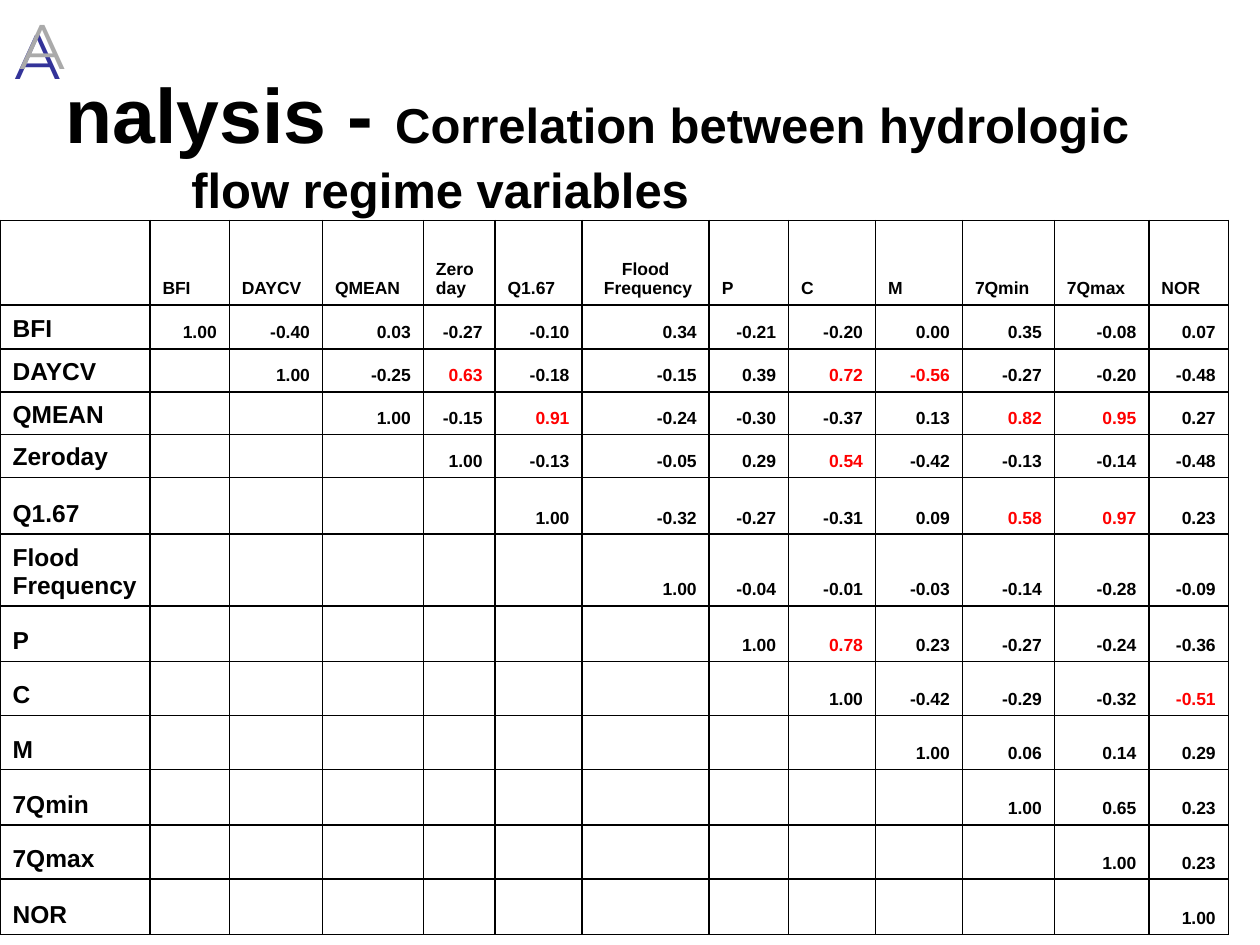
from pptx import Presentation
from pptx.dml.color import RGBColor
from pptx.enum.text import MSO_ANCHOR, PP_ALIGN
from pptx.oxml.ns import qn
from pptx.util import Inches, Pt
from lxml import etree

LEFT, MID, RIGHT = PP_ALIGN.LEFT, PP_ALIGN.CENTER, PP_ALIGN.RIGHT
BOTTOM = MSO_ANCHOR.BOTTOM
COLORS = {"ink": "000000", "red": "FF0000", "blue": "333399",
          "gray": "AAAAAA", "white": "FFFFFF"}

prs = Presentation()
prs.slide_width, prs.slide_height = Inches(10), Inches(7.5)
slide = prs.slides.add_slide(prs.slide_layouts[6])


def add_run(para, text, size, color="ink", face="Arial", bold=True):
    run = para.add_run()
    run.text = text
    run.font.size = Pt(size)
    run.font.name = face
    run.font.bold = bold
    run.font.color.rgb = RGBColor.from_string(COLORS[color])
    return run


def add_edges(cell):
    props = cell._tc.get_or_add_tcPr()
    for n, side in enumerate(("lnL", "lnR", "lnT", "lnB")):
        line = etree.Element(qn("a:" + side), w=str(Pt(1)))
        fill = etree.SubElement(line, qn("a:solidFill"))
        etree.SubElement(fill, qn("a:srgbClr"), val=COLORS["ink"])
        props.insert(n, line)


title = slide.shapes.add_textbox(Inches(0.42), Inches(0.5), Inches(9.42), Inches(1.77))
frame = title.text_frame
frame.word_wrap = True
frame.margin_top = Inches(0.03)
para = frame.paragraphs[0]
hang = para._p.get_or_add_pPr()
hang.set("marL", str(Inches(1)))
hang.set("indent", str(-Inches(1)))
add_run(para, "nalysis - ", 44)
add_run(para, "Correlation between hydrologic flow regime variables", 28)

for color, x, y, w, h in (("blue", 0.02, 0.08, 0.42, 1.08), ("gray", 0, 0, 0.67, 1.25)):
    box = slide.shapes.add_textbox(Inches(x), Inches(y), Inches(w), Inches(h))
    box.text_frame.word_wrap = False
    para = box.text_frame.paragraphs[0]
    para.alignment = MID
    run = add_run(para, "A", 36, color, "Montserrat", False)
    run._r.get_or_add_rPr().set("spc", "720")
    if color == "gray":
        fill = run.font.fill
        fill.gradient()
        fill.gradient_angle = 270
        for stop, shade in zip(fill.gradient_stops, ("gray", "white")):
            stop.color.rgb = RGBColor.from_string(COLORS[shade])

heads = ["BFI", "DAYCV", "QMEAN", "Zero\nday", "Q1.67", "Flood\n Frequency",
         "P", "C", "M", "7Qmin", "7Qmax", "NOR"]
names = ["BFI", "DAYCV", "QMEAN", "Zeroday", "Q1.67", "Flood Frequency",
         "P", "C", "M", "7Qmin", "7Qmax", "NOR"]
values = [
    [1, -0.40, 0.03, -0.27, -0.10, 0.34, -0.21, -0.20, 0, 0.35, -0.08, 0.07],
    [1, -0.25, 0.63, -0.18, -0.15, 0.39, 0.72, -0.56, -0.27, -0.20, -0.48],
    [1, -0.15, 0.91, -0.24, -0.30, -0.37, 0.13, 0.82, 0.95, 0.27],
    [1, -0.13, -0.05, 0.29, 0.54, -0.42, -0.13, -0.14, -0.48],
    [1, -0.32, -0.27, -0.31, 0.09, 0.58, 0.97, 0.23],
    [1, -0.04, -0.01, -0.03, -0.14, -0.28, -0.09],
    [1, 0.78, 0.23, -0.27, -0.24, -0.36],
    [1, -0.42, -0.29, -0.32, -0.51],
    [1, 0.06, 0.14, 0.29],
    [1, 0.65, 0.23],
    [1, 0.23],
    [1],
]
widths = [1.19, 0.63, 0.74, 0.8, 0.57, 0.69, 1.01, 0.63, 0.69, 0.69, 0.73, 0.75, 0.63]
heights = [0.67, 0.35, 0.34, 0.34, 0.34, 0.45, 0.57, 0.44, 0.43, 0.43, 0.44, 0.43, 0.44]

grid = slide.shapes.add_table(13, 13, Inches(0), Inches(1.75), Inches(9.75), Inches(5.67)).table
grid.first_row = grid.horz_banding = False
for col, width in zip(grid.columns, widths):
    col.width = Inches(width)
for row, height in zip(grid.rows, heights):
    row.height = Inches(height)

for r in range(13):
    for c in range(13):
        cell = grid.cell(r, c)
        cell.vertical_anchor = BOTTOM
        cell.fill.background()
        add_edges(cell)
        text, size, color, align = "", 10, "ink", LEFT
        if c == 0:
            cell.margin_right = Inches(0.05)
            if r > 0:
                text, size = names[r - 1], 14
        elif r == 0:
            text = heads[c - 1]
            align = MID if "Flood" in text else LEFT
        elif c >= r:
            value = values[r - 1][c - r]
            text, align = f"{value:.2f}", RIGHT
            if 0.5 < abs(value) < 1 and names[r - 1] != "7Qmin":
                color = "red"
        frame = cell.text_frame
        if not text:
            etree.SubElement(frame.paragraphs[0]._p, qn("a:endParaRPr"), sz="1000")
            continue
        for n, part in enumerate(text.split("\n")):
            para = frame.add_paragraph() if n else frame.paragraphs[0]
            para.alignment = align
            add_run(para, part, size, color)

prs.save("out.pptx")
